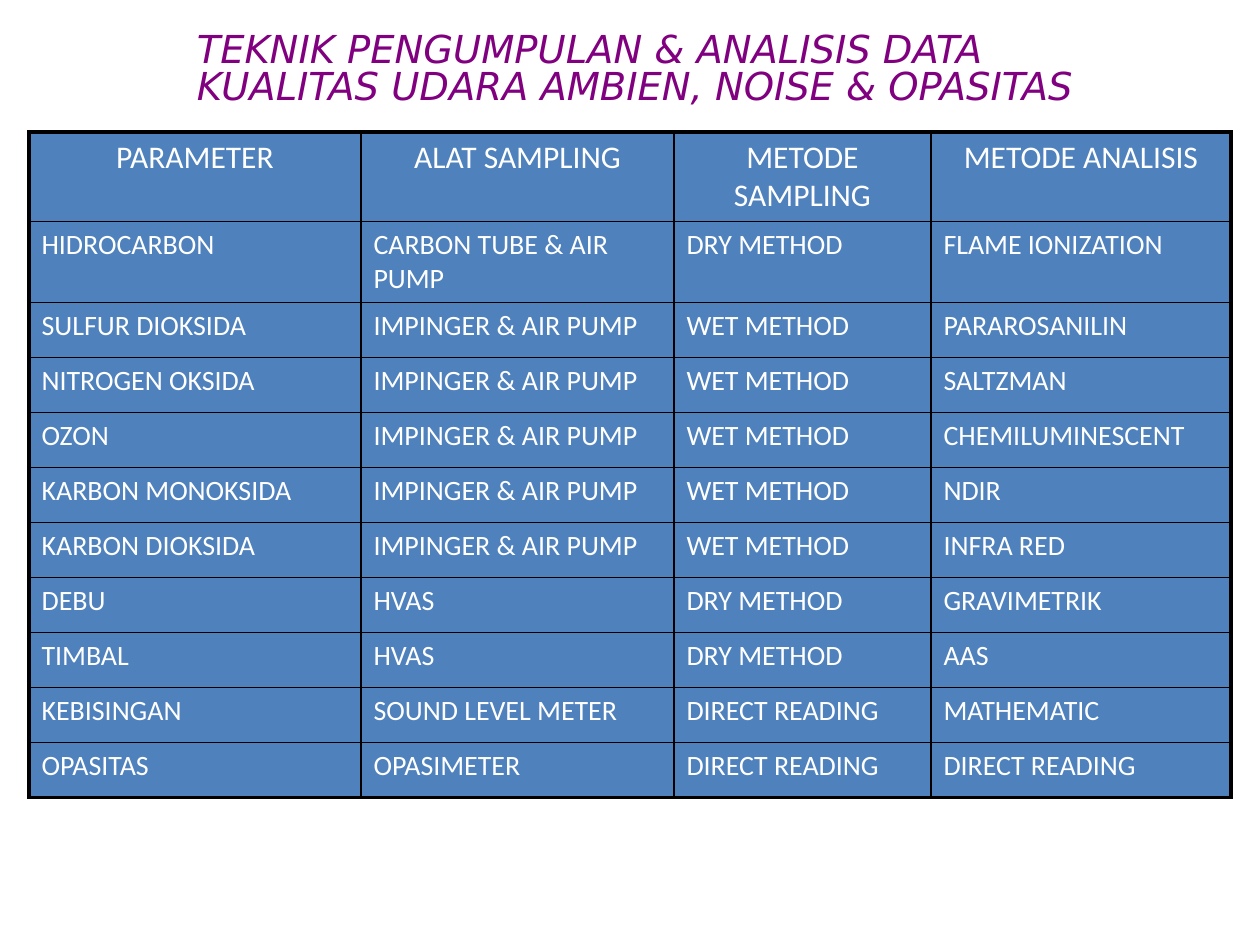
import dataclasses

import lxml.etree
import pptx
import pptx.dml.color
import pptx.enum.shapes
import pptx.enum.text
import pptx.oxml.ns
import pptx.util


@dataclasses.dataclass(frozen=True)
class Theme:
    """Colours, fonts and sizes of the slide."""
    title_color: str = "800080"
    cell_fill: str = "4F81BD"
    cell_text: str = "FFFFFF"
    border: str = "000000"
    title_font: str = "DejaVu Sans"
    table_font: str = "Calibri"
    title_size: int = 22
    header_size: int = 18
    body_size: int = 16
    outer_line: float = 2.25
    inner_line: float = 1


THEME = Theme()
EMU_PER_PX = 914400 / 126

TITLE_LINES = [
    "TEKNIK PENGUMPULAN & ANALISIS DATA",
    "KUALITAS UDARA AMBIEN, NOISE & OPASITAS",
]
COLUMN_WIDTHS = [332, 313, 257, 300]
HEADER_HEIGHT, TALL_HEIGHT, ROW_HEIGHT = 89, 79, 55
PUMP = "IMPINGER & AIR PUMP"
ROWS = [
    ("PARAMETER", "ALAT SAMPLING", "METODE SAMPLING", "METODE ANALISIS"),
    ("HIDROCARBON", "CARBON TUBE & AIR PUMP", "DRY METHOD", "FLAME IONIZATION"),
    ("SULFUR DIOKSIDA", PUMP, "WET METHOD", "PARAROSANILIN"),
    ("NITROGEN OKSIDA", PUMP, "WET METHOD", "SALTZMAN"),
    ("OZON", PUMP, "WET METHOD", "CHEMILUMINESCENT"),
    ("KARBON MONOKSIDA", PUMP, "WET METHOD", "NDIR"),
    ("KARBON DIOKSIDA", PUMP, "WET METHOD", "INFRA RED"),
    ("DEBU", "HVAS", "DRY METHOD", "GRAVIMETRIK"),
    ("TIMBAL", "HVAS", "DRY METHOD", "AAS"),
    ("KEBISINGAN", "SOUND LEVEL METER", "DIRECT READING", "MATHEMATIC"),
    ("OPASITAS", "OPASIMETER", "DIRECT READING", "DIRECT READING"),
]


def px(length):
    """Turn pixels into EMU."""
    return pptx.util.Emu(round(length * EMU_PER_PX))


def rgb(value):
    """Return a colour from its hexadecimal text."""
    return pptx.dml.color.RGBColor.from_string(value)


def set_percent_before(paragraph, percent):
    """Set the space before a paragraph as a share of its line height."""
    paragraph.space_before = pptx.util.Pt(0)
    space = paragraph._p.pPr.find(pptx.oxml.ns.qn("a:spcBef"))
    space.clear()
    share = lxml.etree.SubElement(space, pptx.oxml.ns.qn("a:spcPct"))
    share.set("val", str(percent * 1000))


def write_text(frame, lines, *, font, size, color, italic=False,
               alignment=pptx.enum.text.PP_ALIGN.LEFT, line_spacing=None,
               percent_before=None):
    """Fill a text frame with one formatted paragraph per line."""
    for index, line in enumerate(lines):
        paragraph = frame.add_paragraph() if index else frame.paragraphs[0]
        paragraph.alignment = alignment
        if line_spacing:
            paragraph.line_spacing = line_spacing
        if percent_before:
            set_percent_before(paragraph, percent_before)
        run = paragraph.add_run()
        run.text = line
        run.font.name = font
        run.font.size = pptx.util.Pt(size)
        run.font.italic = italic
        run.font.color.rgb = rgb(color)


def add_title(slide):
    """Add the unfilled ellipse that holds the title."""
    shape = slide.shapes.add_shape(
        pptx.enum.shapes.MSO_SHAPE.OVAL, px(0), px(26), px(1260), px(89))
    shape.shadow.inherit = False
    shape.fill.background()
    shape.line.fill.background()
    shape.text_frame.word_wrap = False
    shape.text_frame.vertical_anchor = pptx.enum.text.MSO_ANCHOR.MIDDLE
    write_text(shape.text_frame, TITLE_LINES, font=THEME.title_font,
               size=THEME.title_size, color=THEME.title_color, italic=True,
               line_spacing=0.8)


def set_border(cell, side, width):
    """Draw one side of a cell."""
    qn = pptx.oxml.ns.qn
    properties = cell._tc.get_or_add_tcPr()
    line = lxml.etree.SubElement(properties, qn(f"a:ln{side}"))
    line.set("w", str(pptx.util.Pt(width)))
    fill = lxml.etree.SubElement(line, qn("a:solidFill"))
    lxml.etree.SubElement(fill, qn("a:srgbClr")).set("val", THEME.border)


def format_cell(cell, row, column):
    """Give a cell its borders and fill, heavier along the table's edge."""
    edges = {
        "L": column == 0,
        "R": column == len(COLUMN_WIDTHS) - 1,
        "T": row == 0,
        "B": row == len(ROWS) - 1,
    }
    for side, is_outer in edges.items():
        set_border(cell, side, THEME.outer_line if is_outer else THEME.inner_line)
    cell.fill.solid()
    cell.fill.fore_color.rgb = rgb(THEME.cell_fill)


def add_methods_table(slide):
    """Add the table of parameters, tools and methods."""
    heights = [HEADER_HEIGHT, TALL_HEIGHT] + [ROW_HEIGHT] * (len(ROWS) - 2)
    table = slide.shapes.add_table(
        len(ROWS), len(COLUMN_WIDTHS), px(29), px(132),
        px(sum(COLUMN_WIDTHS)), px(sum(heights))).table
    for column, width in zip(table.columns, COLUMN_WIDTHS):
        column.width = px(width)
    for row, height in zip(table.rows, heights):
        row.height = px(height)
    align = pptx.enum.text.PP_ALIGN
    for row, texts in enumerate(ROWS):
        for column, text in enumerate(texts):
            cell = table.cell(row, column)
            format_cell(cell, row, column)
            write_text(cell.text_frame, [text], font=THEME.table_font,
                       size=THEME.body_size if row else THEME.header_size,
                       color=THEME.cell_text, percent_before=20,
                       alignment=align.LEFT if row else align.CENTER)


def main():
    """Build and save the slide."""
    presentation = pptx.Presentation()
    presentation.slide_width = px(1260)
    presentation.slide_height = px(945)
    slide = presentation.slides.add_slide(presentation.slide_layouts[6])
    add_title(slide)
    add_methods_table(slide)
    presentation.save("out.pptx")


if __name__ == "__main__":
    main()
